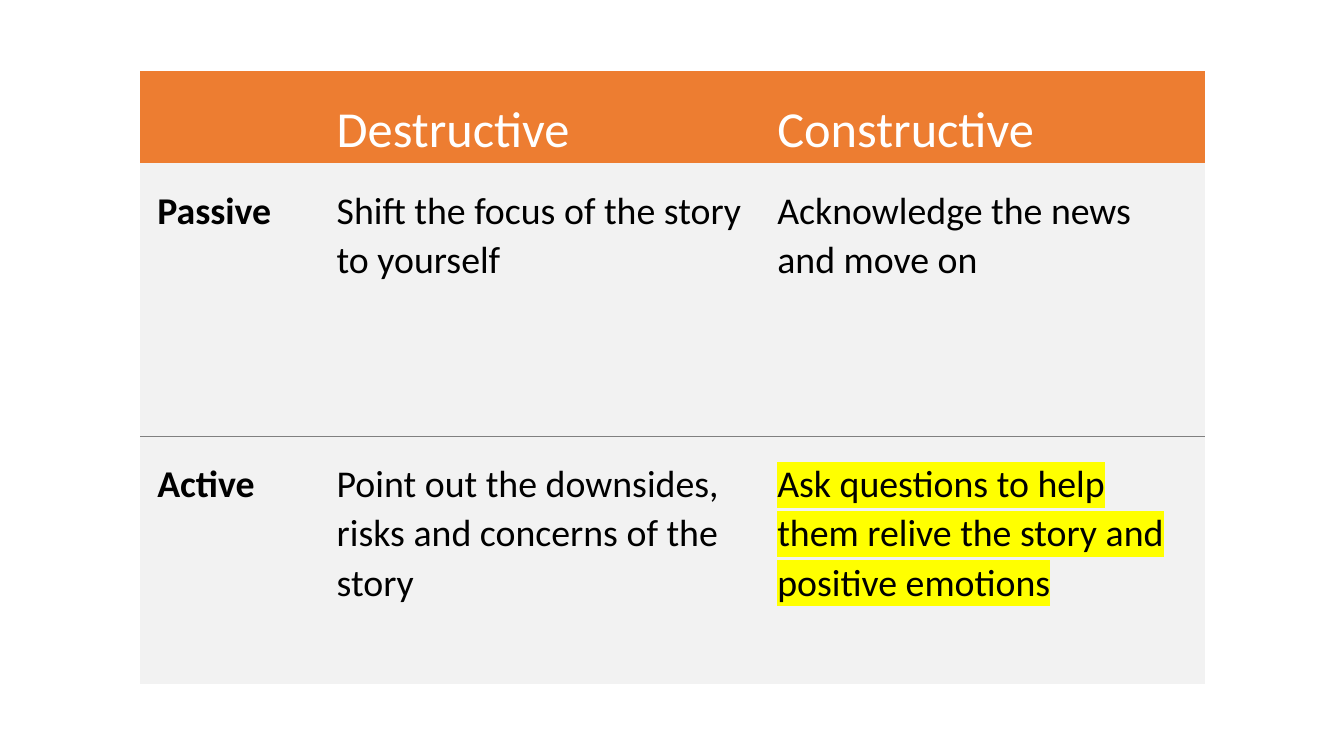
"""Build a slide with a table of passive and active, destructive and constructive responses."""
from dataclasses import dataclass

from lxml import etree
from pptx import Presentation
from pptx.dml.color import RGBColor
from pptx.enum.text import MSO_ANCHOR
from pptx.oxml.ns import qn
from pptx.table import Table, _Cell
from pptx.util import Inches, Pt

TOP = MSO_ANCHOR.TOP
MIDDLE = MSO_ANCHOR.MIDDLE

ORANGE = RGBColor(0xED, 0x7D, 0x31)
LIGHT_GRAY = RGBColor(0xF2, 0xF2, 0xF2)
GRAY = RGBColor(0x80, 0x80, 0x80)
WHITE = RGBColor(0xFF, 0xFF, 0xFF)
BLACK = RGBColor(0, 0, 0)
YELLOW = RGBColor(0xFF, 0xFF, 0x00)

FONT = "Calibri"
PLAIN_TABLE_STYLE = "{2D5ABB26-0587-4C30-8999-92F81FD0307C}"
COLUMN_WIDTHS = (1.78, 4.37, 4.41)
ROW_HEIGHTS = (0.92, 2.71, 2.46)


@dataclass(frozen=True)
class RowStyle:
    fill: RGBColor
    color: RGBColor
    size: float
    anchor: MSO_ANCHOR


@dataclass(frozen=True)
class ResponseRow:
    labels: tuple[str, str, str]
    style: RowStyle
    divider: str = ""
    highlighted_column: int = -1


HEADER = RowStyle(ORANGE, WHITE, 36, MIDDLE)
BODY = RowStyle(LIGHT_GRAY, BLACK, 27, TOP)

RESPONSES = (
    ResponseRow(("", "Destructive", "Constructive"), HEADER),
    ResponseRow(
        ("Passive", "Shift the focus of the story to yourself",
         "Acknowledge the news and move on"),
        BODY, divider="a:lnB"),
    ResponseRow(
        ("Active", "Point out the downsides, risks and concerns of the story",
         "Ask questions to help them relive the story and positive emotions"),
        BODY, divider="a:lnT", highlighted_column=2),
)


def add_color(parent: etree._Element, color: RGBColor) -> None:
    """Append an RGB colour element."""
    etree.SubElement(parent, qn("a:srgbClr"), val=str(color))


def add_divider(cell: _Cell, side: str) -> None:
    """Draw a thin gray border on one side of a cell."""
    border = etree.Element(qn(side), w=str(Pt(0.75)))
    add_color(etree.SubElement(border, qn("a:solidFill")), GRAY)
    cell._tc.get_or_add_tcPr().insert(0, border)


def write_label(cell: _Cell, label: str, style: RowStyle,
                bold: bool, highlighted: bool) -> None:
    """Write one formatted run into a cell."""
    paragraph = cell.text_frame.paragraphs[0]
    paragraph.line_spacing = 1.07
    paragraph.space_after = Pt(8)
    run = paragraph.add_run()
    run.text = label
    run.font.name = FONT
    run.font.size = Pt(style.size)
    run.font.bold = bold
    run.font.color.rgb = style.color
    if highlighted:
        highlight = etree.Element(qn("a:highlight"))
        add_color(highlight, YELLOW)
        run.font._element.find(qn("a:solidFill")).addnext(highlight)


def fill_row(table: Table, row_index: int, response: ResponseRow) -> None:
    """Format and fill the cells of one row."""
    style = response.style
    for column, label in enumerate(response.labels):
        cell = table.cell(row_index, column)
        cell.margin_left = cell.margin_right = Inches(0.17)
        cell.margin_top = Inches(0.22)
        cell.margin_bottom = 0
        cell.vertical_anchor = style.anchor
        cell.fill.solid()
        cell.fill.fore_color.rgb = style.fill
        if response.divider:
            add_divider(cell, response.divider)
        if label:
            write_label(cell, label, style, style is BODY and column == 0,
                        column == response.highlighted_column)


def main() -> None:
    """Create and save the presentation."""
    presentation = Presentation()
    presentation.slide_width = Inches(13.33)
    presentation.slide_height = Inches(7.5)
    slide = presentation.slides.add_slide(presentation.slide_layouts[6])
    table = slide.shapes.add_table(
        len(ROW_HEIGHTS), len(COLUMN_WIDTHS), Inches(1.39), Inches(0.7),
        Inches(sum(COLUMN_WIDTHS)), Inches(sum(ROW_HEIGHTS))).table
    table.horz_banding = False
    table._tbl.tblPr.find(qn("a:tableStyleId")).text = PLAIN_TABLE_STYLE
    for column, width in zip(table.columns, COLUMN_WIDTHS):
        column.width = Inches(width)
    for row, height in zip(table.rows, ROW_HEIGHTS):
        row.height = Inches(height)
    for row_index, response in enumerate(RESPONSES):
        fill_row(table, row_index, response)
    presentation.save("out.pptx")


if __name__ == "__main__":
    main()
